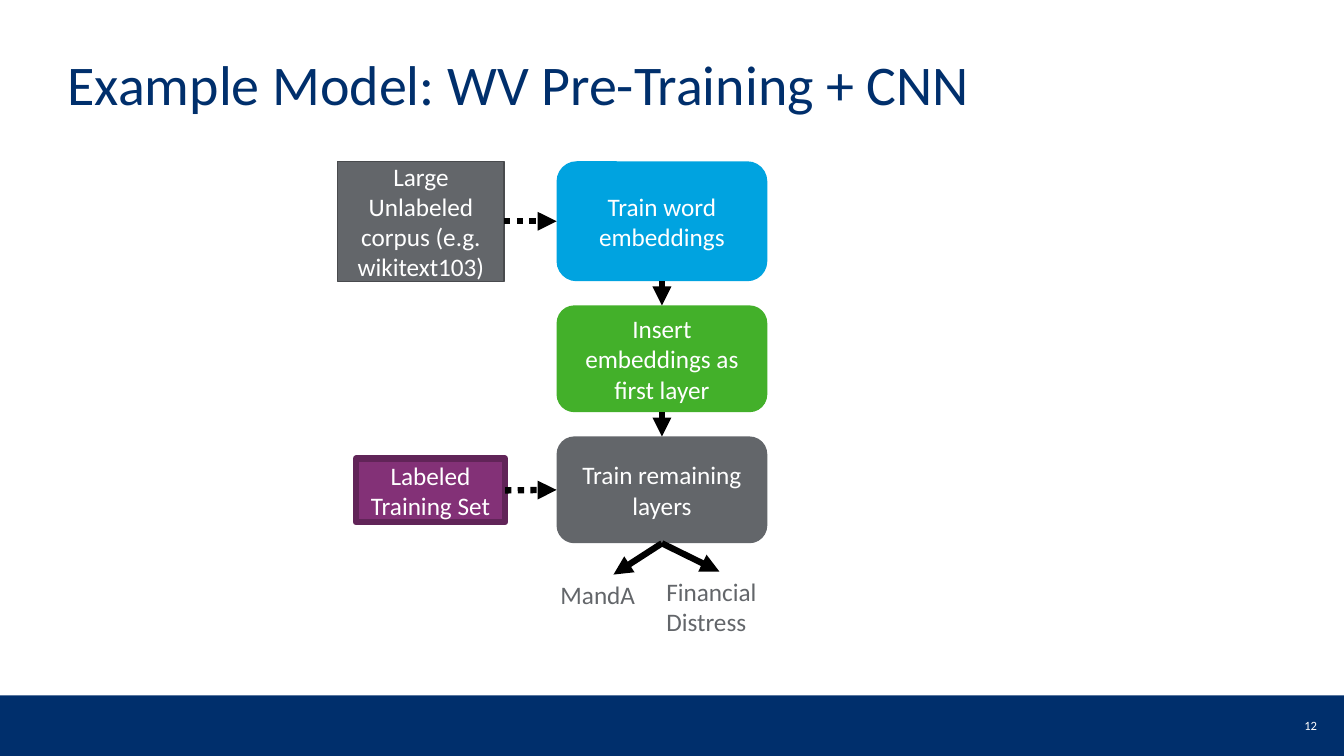
from lxml.etree import SubElement
from pptx import Presentation
from pptx.dml.color import RGBColor
from pptx.enum.dml import MSO_LINE
from pptx.enum.shapes import MSO_CONNECTOR, MSO_SHAPE
from pptx.enum.text import MSO_ANCHOR, MSO_AUTO_SIZE, PP_ALIGN
from pptx.oxml.ns import qn
from pptx.util import Inches, Pt

NAVY = RGBColor(0x00, 0x2F, 0x6C)
BLUE = RGBColor(0x00, 0xA3, 0xE0)
GREEN = RGBColor(0x43, 0xB0, 0x2A)
GRAY = RGBColor(0x63, 0x66, 0x6A)
DARK = RGBColor(0x49, 0x4B, 0x4E)
PLUM = RGBColor(0x83, 0x31, 0x77)
GRAPE = RGBColor(0x61, 0x24, 0x58)
BLACK = RGBColor(0x00, 0x00, 0x00)
WHITE = RGBColor(0xFF, 0xFF, 0xFF)

TOP, LEFT, BOTTOM, RIGHT = range(4)


def style(item, look):
    for name, value in look.items():
        setattr(item, name, value)


def write(shape, text, color, size=18, align=PP_ALIGN.LEFT, anchor=MSO_ANCHOR.TOP):
    frame = shape.text_frame
    style(frame, {"text": text, "word_wrap": True, "vertical_anchor": anchor,
                  "auto_size": MSO_AUTO_SIZE.NONE})
    para = frame.paragraphs[0]
    para.alignment = align
    style(para.font, {"name": "Calibri", "size": Pt(size), "bold": False})
    para.font.color.rgb = color
    return para


def block(slide, kind, box, fill, text="", edge=None, width=1):
    shape = slide.shapes.add_shape(kind, *map(Inches, box))
    shape.shadow.inherit = False
    shape.fill.solid()
    shape.fill.fore_color.rgb = fill
    if edge is None:
        shape.line.fill.background()
    else:
        shape.line.color.rgb = edge
        shape.line.width = Pt(width)
    if text:
        write(shape, text, WHITE, align=PP_ALIGN.CENTER, anchor=MSO_ANCHOR.MIDDLE)
    return shape


def label(slide, box, text, color, **look):
    shape = slide.shapes.add_textbox(*map(Inches, box))
    write(shape, text, color, **look)
    return shape


def arrow(slide, start, out, end, into, dash=None):
    link = slide.shapes.add_connector(MSO_CONNECTOR.STRAIGHT, 0, 0, 0, 0)
    link.begin_connect(start, out)
    link.end_connect(end, into)
    link.line.color.rgb = BLACK
    style(link.line, {"width": Pt(4.5), "dash_style": dash})
    frame = link.element.spPr
    SubElement(frame.find(qn("a:ln")), qn("a:tailEnd"), type="triangle")
    SubElement(frame, qn("a:effectLst"))


def heading(slide, box, text):
    title = slide.shapes.title
    style(title, dict(zip(("left", "top", "width", "height"), map(Inches, box))))
    write(title, text, NAVY, size=40).line_spacing = 0.9


def footer(slide, box, page):
    left, top, width, height = box
    block(slide, MSO_SHAPE.RECTANGLE, box, NAVY)
    label(slide, (left + width - 0.66, top + 0.17, 0.66, 0.25), page, WHITE,
          size=9, align=PP_ALIGN.CENTER)


def model(slide, box):
    left, top, width, height = box
    mid = left + 2.17
    steps = [
        block(slide, MSO_SHAPE.ROUNDED_RECTANGLE, (mid, top + drop, 2.09, tall), fill, text)
        for drop, tall, fill, text in (
            (0, 1.19, BLUE, "Train word embeddings"),
            (1.43, 1.06, GREEN, "Insert embeddings as first layer"),
            (2.73, 1.06, GRAY, "Train remaining layers"),
        )
    ]
    corpus = block(slide, MSO_SHAPE.RECTANGLE, (left, top, 1.65, 1.19), GRAY,
                   "Large Unlabeled corpus (e.g. wikitext103)", DARK)
    train = block(slide, MSO_SHAPE.RECTANGLE, (left + 0.18, top + 2.95, 1.48, 0.63), PLUM,
                  "Labeled Training Set", GRAPE, 4.5)
    base = top + height
    goals = [
        label(slide, (mid - 0.06, base - 0.68, 1.25, 0.4), "MandA", GRAY),
        label(slide, (left + width - 1.25, base - 0.71, 1.25, 0.71), "Financial Distress", GRAY),
    ]
    for above, below in zip(steps, steps[1:]):
        arrow(slide, above, BOTTOM, below, TOP)
    for data, step in ((corpus, steps[0]), (train, steps[-1])):
        arrow(slide, data, RIGHT, step, LEFT, MSO_LINE.ROUND_DOT)
    for goal in goals:
        arrow(slide, steps[-1], BOTTOM, goal, TOP)


def main():
    deck = Presentation()
    style(deck, {"slide_width": Inches(13.33), "slide_height": Inches(7.5)})
    slide = deck.slides.add_slide(deck.slide_layouts[5])
    footer(slide, (0, 6.9, 13.33, 0.6), "12")
    heading(slide, (0.57, 0.52, 11.5, 1.45), "Example Model: WV Pre-Training + CNN")
    model(slide, (3.35, 1.6, 4.41, 4.78))
    deck.save("out.pptx")


if __name__ == "__main__":
    main()
